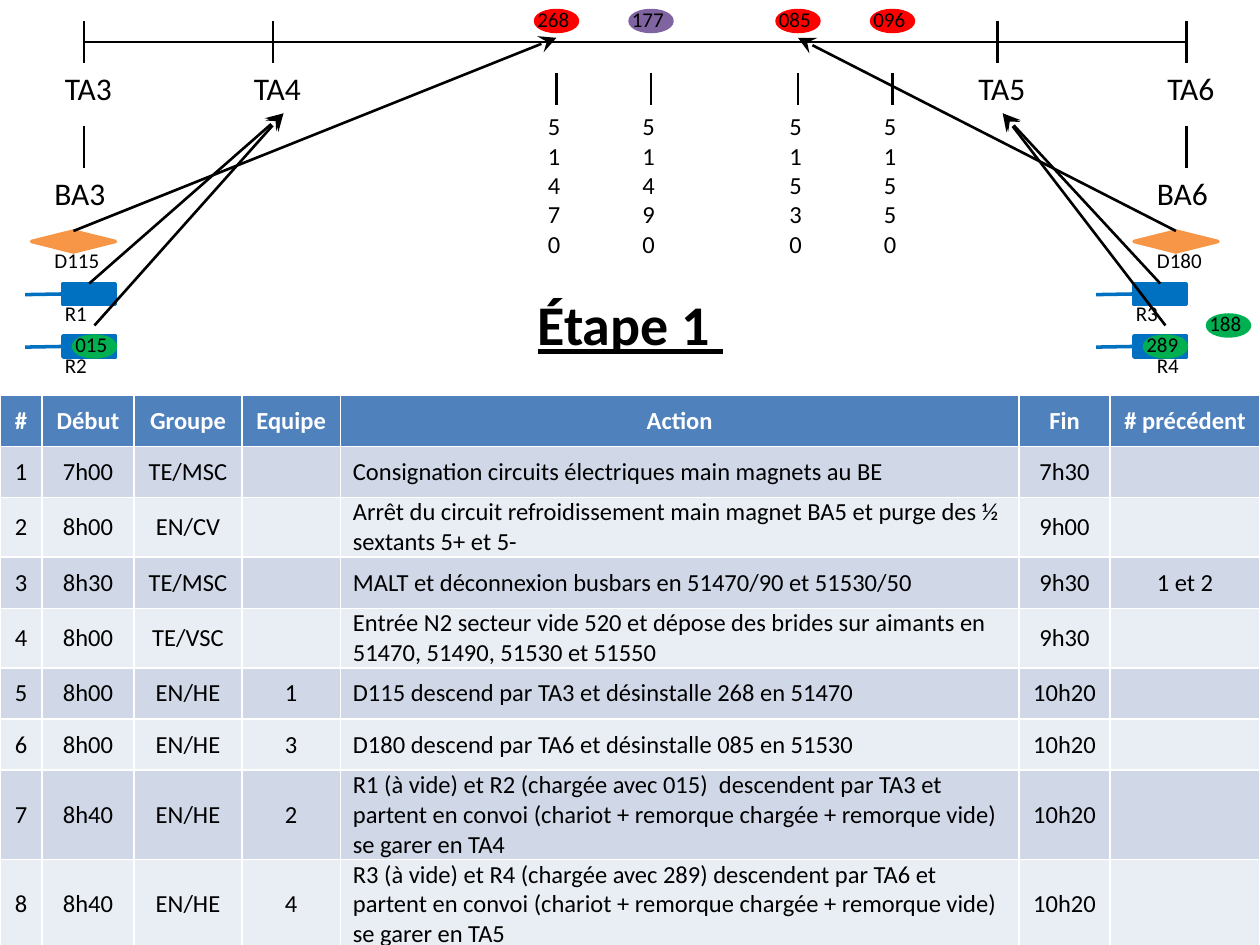
from lxml.etree import SubElement
from pptx import Presentation
from pptx.dml.color import RGBColor
from pptx.enum.shapes import MSO_CONNECTOR, MSO_SHAPE
from pptx.enum.text import MSO_ANCHOR, MSO_AUTO_SIZE, PP_ALIGN
from pptx.oxml.ns import qn
from pptx.util import Cm, Pt

TOP, BOTTOM = 0, 2
COLUMN_WIDTHS = [0.85, 1.85, 2.18, 1.98, 13.68, 1.84, 3.02]
ACTION_COLUMN = 4
ROWS = [
    ["#", "Début", "Groupe", "Equipe", "Action", "Fin", "# précédent"],
    ["1", "7h00", "TE/MSC", "", "Consignation circuits électriques main magnets au BE", "7h30", ""],
    ["2", "8h00", "EN/CV", "",
     "Arrêt du circuit refroidissement main magnet BA5 et purge des ½ sextants 5+ et 5-", "9h00", ""],
    ["3", "8h30", "TE/MSC", "", "MALT et déconnexion busbars en 51470/90 et 51530/50", "9h30", "1 et 2"],
    ["4", "8h00", "TE/VSC", "",
     "Entrée N2 secteur vide 520 et dépose des brides sur aimants en 51470, 51490, 51530 et 51550",
     "9h30", ""],
    ["5", "8h00", "EN/HE", "1", "D115 descend par TA3 et désinstalle 268 en 51470", "10h20", ""],
    ["6", "8h00", "EN/HE", "3", "D180 descend par TA6 et désinstalle 085 en 51530", "10h20", ""],
    ["7", "8h40", "EN/HE", "2",
     "R1 (à vide) et R2 (chargée avec 015)  descendent par TA3 et partent en convoi "
     "(chariot + remorque chargée + remorque vide) se garer en TA4", "10h20", ""],
    ["8", "8h40", "EN/HE", "4",
     "R3 (à vide) et R4 (chargée avec 289) descendent par TA6 et partent en convoi "
     "(chariot + remorque chargée + remorque vide) se garer en TA5", "10h20", ""],
]


def color(value):
    """Turn a hex string into a colour."""
    return RGBColor.from_string(value)


def grid(steps):
    """Convert grid steps to a length; the page is 120 by 90 steps."""
    return Cm(25.4 * steps / 120)


def style_font(font, size, value="000000", **extra):
    """Apply the deck's typeface and any further font values."""
    font.color.rgb = color(value)
    for name, setting in {"name": "Calibri", "size": Pt(size), **extra}.items():
        setattr(font, name, setting)


def add_label(page, text, left, top, width, height, size):
    """Add a left-aligned text label."""
    box = page.shapes.add_textbox(*map(grid, (left, top, width, height)))
    box.text_frame.word_wrap = True
    box.text_frame.auto_size = MSO_AUTO_SIZE.SHAPE_TO_FIT_TEXT
    span = box.text_frame.paragraphs[0].add_run()
    span.text = text
    style_font(span.font, size)
    return box


def add_symbol(page, kind, fill, left, top, width):
    """Add a filled shape two steps high."""
    shape = page.shapes.add_shape(kind, *map(grid, (left, top, width, 2)))
    shape.shadow.inherit = False
    shape.fill.solid()
    shape.fill.fore_color.rgb = color(fill)
    shape.line.color.rgb = color(fill)
    shape.line.width = Pt(2)
    return shape


def add_line(page, x1, y1, x2, y2):
    """Add a plain black line."""
    line = page.shapes.add_connector(MSO_CONNECTOR.STRAIGHT, *map(grid, (x1, y1, x2, y2)))
    line.line.color.rgb = color("000000")
    line.line.width = Pt(1.5)
    SubElement(line._element.spPr, qn("a:effectLst"))
    return line


def add_move(page, start, target, joined=True):
    """Draw an arrow from the top of one part to the bottom of another."""
    line = add_line(page, 0, 0, 1, 1)
    line.begin_x, line.begin_y = start.left + start.width // 2, start.top
    if joined:
        line.begin_connect(start, TOP)
    line.end_connect(target, BOTTOM)
    SubElement(line.line._get_or_add_ln(), qn("a:tailEnd"), type="stealth", w="lg", len="lg")


def add_magnet(page, number, fill, left, top):
    """Add a numbered oval and return its label."""
    add_symbol(page, MSO_SHAPE.OVAL, fill, left, top, 4)
    return add_label(page, number, left - 1, top - 1, 6, 3.6, 12)


def add_station(page, name, x, top, width):
    """Add a tick with a station name under it and return the name."""
    add_line(page, x, top, x, top + 4)
    return add_label(page, name, x - width // 2, top + 4, width, 4.8, 18)


def add_tunnel(page, left, top):
    """Add the line, its stations and magnets; return labels by name."""
    add_line(page, left, top + 2, left + 105, top + 2)
    labels = {}
    for name, x, width in (("TA3", 0, 7), ("TA4", 18, 7), ("TA5", 87, 7), ("TA6", 105, 7)):
        labels[name] = add_station(page, name, left + x, top, width)
    labels["TA4"].width = grid(8)
    for number, place, fill, x in (("268", "51470", "FF0000", 45), ("177", "51490", "8064A2", 54),
                                   ("085", "51530", "FF0000", 68), ("096", "51550", "FF0000", 77)):
        labels[number] = add_magnet(page, number, fill, left + x - 2, top - 1)
        add_line(page, left + x, top + 5, left + x, top + 8)
        add_label(page, place, left + x - 2, top + 8, 3, 15.4, 14)
    return labels


def add_trailer(page, name, left, top, name_left):
    """Add a trailer with its drawbar and name."""
    trailer = add_symbol(page, MSO_SHAPE.LINE_CALLOUT_1, "0070C0", left, top, 5)
    for index, ratio in enumerate((0.5, -0.01, 0.53, -0.72)):
        trailer.adjustments[index] = ratio
    add_label(page, name, name_left, top + 1, 5, 3.6, 12)
    return trailer


def add_yard(page, left, top, hall, tick_x, tractor, trailers, load):
    """Add an access hall with its vehicles; return tractor, empty trailer and load."""
    add_station(page, hall, tick_x, top, 8)
    lifter = add_symbol(page, MSO_SHAPE.FLOWCHART_DECISION, "F79646", left, top + 10, 8)
    add_label(page, tractor, left + 1, top + 11, 8, 3.6, 12)
    parts = [add_trailer(page, name, trailer_left, top + 15 + 5 * index, name_left)
             for index, (name, trailer_left, name_left) in enumerate(trailers)]
    number, load_left = load
    return lifter, parts[0], add_magnet(page, number, "00B050", load_left, top + 20)


def add_title(page, text, left, top, width, height):
    """Place and format the slide title."""
    title = page.shapes.title
    title.left, title.top, title.width, title.height = map(grid, (left, top, width, height))
    frame = title.text_frame
    for name, setting in {"text": text, "word_wrap": True, "auto_size": MSO_AUTO_SIZE.NONE,
                          "vertical_anchor": MSO_ANCHOR.TOP}.items():
        setattr(frame, name, setting)
    para = frame.paragraphs[0]
    para.alignment = PP_ALIGN.LEFT
    style_font(para.runs[0].font, 32, bold=True, underline=True)


def add_schedule(page, left, top, row_height):
    """Add the table of actions."""
    table = page.shapes.add_table(len(ROWS), len(COLUMN_WIDTHS), left, top,
                                  Cm(sum(COLUMN_WIDTHS)), row_height * len(ROWS)).table
    for column, width in zip(table.columns, COLUMN_WIDTHS):
        column.width = Cm(width)
    for row_index, values in enumerate(ROWS):
        table.rows[row_index].height = row_height
        header = row_index == 0
        fill = "4F81BD" if header else ("E9EDF4", "D0D8E8")[row_index % 2]
        for column_index, value in enumerate(values):
            cell = table.cell(row_index, column_index)
            cell.fill.solid()
            cell.fill.fore_color.rgb = color(fill)
            cell.vertical_anchor = MSO_ANCHOR.MIDDLE
            if not header:
                cell.margin_top = cell.margin_bottom = 0
            cell.text = value
            para = cell.text_frame.paragraphs[0]
            is_action = column_index == ACTION_COLUMN and not header
            para.alignment = PP_ALIGN.LEFT if is_action else PP_ALIGN.CENTER
            for span in para.runs:
                style_font(span.font, 14, "FFFFFF" if header else "000000", bold=header)


def main():
    """Build and save the deck."""
    deck = Presentation()
    deck.slide_width, deck.slide_height = Cm(25.4), Cm(19.05)
    page = deck.slides.add_slide(deck.slide_layouts[5])
    add_title(page, "Étape 1 ", 50, 27, 27, 7.7)
    add_schedule(page, 0, Cm(7.97), Cm(1.03))
    labels = add_tunnel(page, 8, 2)
    west = add_yard(page, 3, 12, "BA3", 8, "D115", [("R1", 6, 5), ("R2", 6, 5)], ("015", 7))
    east = add_yard(page, 108, 12, "BA6", 113, "D180", [("R3", 108, 107), ("R4", 108, 109)], ("289", 109))
    add_magnet(page, "188", "00B050", 115, 30)
    for (lifter, trailer, load), magnet, station in ((west, "268", "TA4"), (east, "085", "TA5")):
        add_move(page, lifter, labels[magnet])
        add_move(page, trailer, labels[station], joined=False)
        add_move(page, load, labels[station])
    deck.save("out.pptx")


if __name__ == "__main__":
    main()
